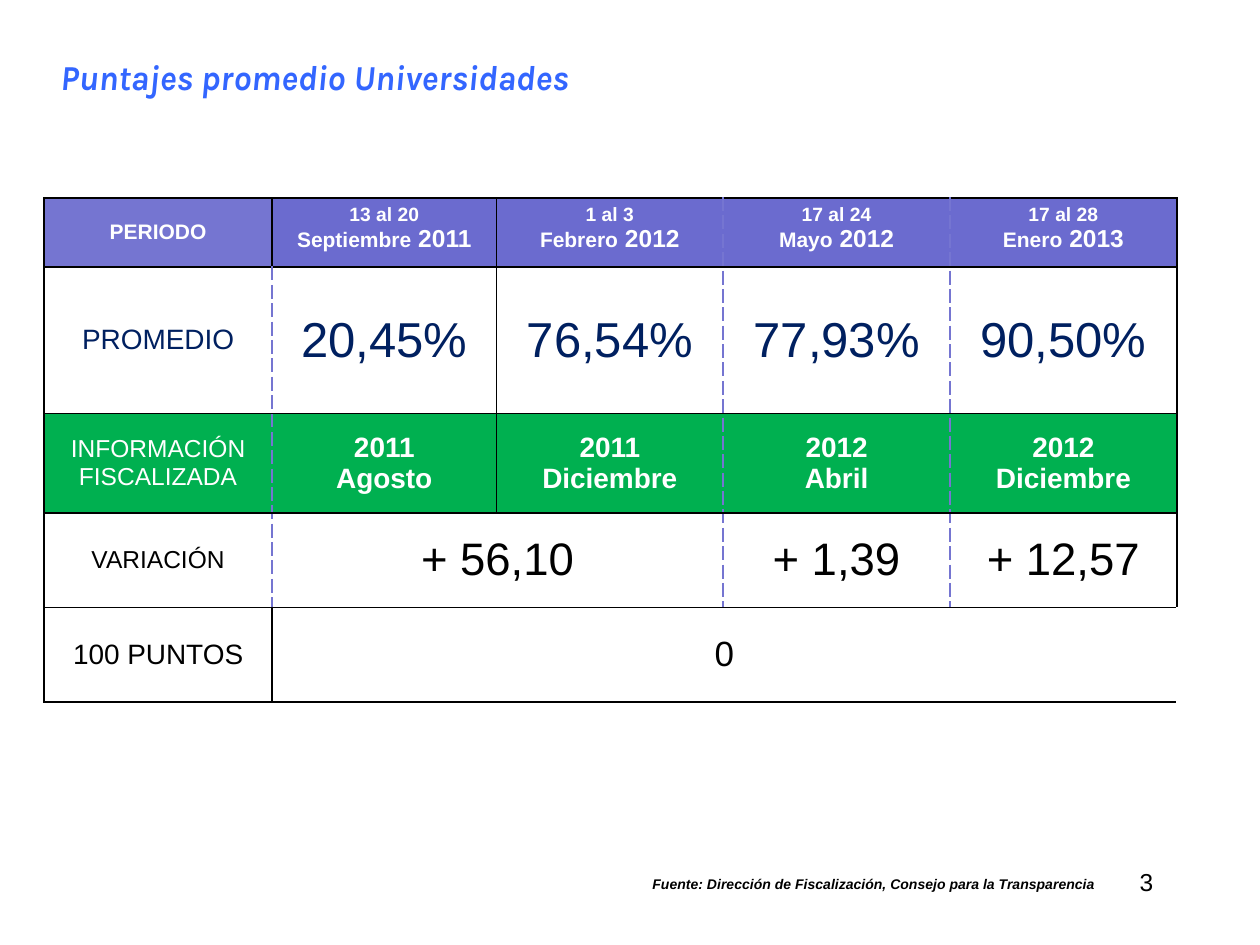
"""Builds the slide of average university scores by inspection period."""
from lxml.etree import SubElement
from pptx import Presentation
from pptx.dml.color import RGBColor
from pptx.enum.text import MSO_ANCHOR, PP_ALIGN
from pptx.oxml.ns import qn
from pptx.util import Inches, Pt

BLACK = RGBColor(0x00, 0x00, 0x00)
WHITE = RGBColor(0xFF, 0xFF, 0xFF)
BLUE = RGBColor(0x33, 0x66, 0xFF)
NAVY = RGBColor(0x00, 0x20, 0x60)
GREEN = RGBColor(0x00, 0xB0, 0x50)
LAVENDER = RGBColor(0x75, 0x75, 0xD1)
VIOLET = RGBColor(0x6B, 0x6B, 0xCF)

COLUMN_WIDTHS = [1.81, 1.78, 1.8, 1.8, 1.8]
ROW_HEIGHTS = [0.55, 1.16, 0.79, 0.75, 0.75]
PERIODS = [
    ("13 al 20", "Septiembre", "2011"),
    ("1 al 3", "Febrero", "2012"),
    ("17 al 24", "Mayo", "2012"),
    ("17 al 28", "Enero", "2013"),
]
AVERAGES = ["20,45%", "76,54%", "77,93%", "90,50%"]
INSPECTED = [("2011", "Agosto"), ("2011", "Diciembre"), ("2012", "Abril"), ("2012", "Diciembre")]
VARIATIONS = {1: "+ 56,10", 3: "+ 1,39", 4: "+ 12,57"}
ROW_LABELS = [
    ("PERIODO", 12, WHITE, True),
    ("PROMEDIO", 16, NAVY, False),
    ("INFORMACIÓN FISCALIZADA", 14, WHITE, False),
    ("VARIACIÓN", 14, BLACK, False),
    ("100 PUNTOS", 16, BLACK, False),
]
ROW_FILLS = [VIOLET, WHITE, GREEN, WHITE, WHITE]


def add_text(paragraph, text, size=14, color=BLACK, bold=False, italic=False,
             font="Arial", align=PP_ALIGN.CENTER):
    """Append a formatted run to a paragraph."""
    paragraph.alignment = align
    run = paragraph.add_run()
    run.text = text
    run.font.name = font
    run.font.size = Pt(size)
    run.font.bold = bold
    run.font.italic = italic
    run.font.color.rgb = color


def is_dashed(row, boundary):
    """Tell whether a vertical rule of the table is dashed."""
    return boundary in (3, 4) or (boundary == 1 and row in (1, 2, 3))


class SlideBuilder:
    """Holds the current slide and adds each kind of element to it."""

    def __init__(self, presentation):
        """Start a slide that has a title."""
        self.slide = presentation.slides.add_slide(presentation.slide_layouts[5])

    def add_title(self, text, left, top, width, height, **style):
        """Place and format the title."""
        title = self.slide.shapes.title
        title.left, title.top = Inches(left), Inches(top)
        title.width, title.height = Inches(width), Inches(height)
        frame = title.text_frame
        frame.vertical_anchor = MSO_ANCHOR.TOP
        frame.margin_left = Inches(0.17)
        add_text(frame.paragraphs[0], text, **style)

    def add_label(self, text, left, top, width, height, **style):
        """Add a text box with one line."""
        box = self.slide.shapes.add_textbox(Inches(left), Inches(top), Inches(width), Inches(height))
        box.text_frame.word_wrap = True
        add_text(box.text_frame.paragraphs[0], text, **style)

    def add_table(self, left, top, widths, heights):
        """Add an unstyled table and return it."""
        frame = self.slide.shapes.add_table(len(heights), len(widths), Inches(left), Inches(top),
                                            Inches(sum(widths)), Inches(sum(heights)))
        table = frame.table
        table.first_row = table.horz_banding = False
        for column, width in zip(table.columns, widths):
            column.width = Inches(width)
        for row, height in zip(table.rows, heights):
            row.height = Inches(height)
        return table

    def add_border(self, cell, side, dashed=False):
        """Draw one side of a cell."""
        properties = cell._tc.get_or_add_tcPr()
        line = SubElement(properties, qn(f"a:ln{side}"), w=str(Pt(1.5 if dashed else 1)))
        fill = SubElement(line, qn("a:solidFill"))
        SubElement(fill, qn("a:srgbClr"), val=str(LAVENDER if dashed else BLACK))
        SubElement(line, qn("a:prstDash"), val="sysDash" if dashed else "solid")

    def format_cell(self, table, row, column, color):
        """Set the borders, fill and anchor of a cell."""
        cell = table.cell(row, column)
        next_spanned = column < 4 and table.cell(row, column + 1).is_spanned
        if not cell.is_spanned:
            self.add_border(cell, "L", is_dashed(row, column))
        if not next_spanned:
            self.add_border(cell, "R", is_dashed(row, column + 1))
        self.add_border(cell, "T")
        self.add_border(cell, "B")
        cell.fill.solid()
        cell.fill.fore_color.rgb = color
        cell.vertical_anchor = MSO_ANCHOR.MIDDLE

    def write_cell(self, cell, *lines, **style):
        """Write each line, a list of text and size pairs, as a paragraph."""
        frame = cell.text_frame
        for index, line in enumerate(lines):
            paragraph = frame.add_paragraph() if index else frame.paragraphs[0]
            for text, size in line:
                add_text(paragraph, text, size=size, **style)


def add_scores(builder):
    """Add the table of scores."""
    table = builder.add_table(0.35, 1.57, COLUMN_WIDTHS, ROW_HEIGHTS)
    table.cell(3, 1).merge(table.cell(3, 2))
    table.cell(4, 1).merge(table.cell(4, 4))
    for row, color in enumerate(ROW_FILLS):
        for column in range(len(COLUMN_WIDTHS)):
            header_label = row == 0 and column == 0
            builder.format_cell(table, row, column, LAVENDER if header_label else color)
    for row, (label, size, color, bold) in enumerate(ROW_LABELS):
        builder.write_cell(table.cell(row, 0), [(label, size)], color=color, bold=bold)
    for column, (days, month, year) in enumerate(PERIODS, start=1):
        cell = table.cell(0, column)
        cell.vertical_anchor = MSO_ANCHOR.TOP
        builder.write_cell(cell, [(days, 11)], [(month, 12), (f" {year}", 14)], color=WHITE, bold=True)
    for column, average in enumerate(AVERAGES, start=1):
        builder.write_cell(table.cell(1, column), [(average, 28)], color=NAVY)
    for column, (year, month) in enumerate(INSPECTED, start=1):
        builder.write_cell(table.cell(2, column), [(year, 16)], [(month, 16)], color=WHITE, bold=True)
    for column, variation in VARIATIONS.items():
        builder.write_cell(table.cell(3, column), [(variation, 26)])
    builder.write_cell(table.cell(4, 1), [("0", 20)])


def main():
    """Build and save the presentation."""
    presentation = Presentation()
    presentation.slide_width, presentation.slide_height = Inches(10), Inches(7.5)
    builder = SlideBuilder(presentation)
    builder.add_title("Puntajes promedio Universidades", 0.31, 0.39, 8.11, 0.44, size=20,
                      color=BLUE, bold=True, italic=True, font="Karla", align=PP_ALIGN.LEFT)
    builder.add_label("3", 7.17, 6.83, 2.08, 0.5, align=PP_ALIGN.RIGHT)
    builder.add_label("Fuente: Dirección de Fiscalización, Consejo para la Transparencia",
                      5.08, 6.9, 5, 0.24, size=8, bold=True, italic=True, align=PP_ALIGN.LEFT)
    add_scores(builder)
    presentation.save("out.pptx")


if __name__ == "__main__":
    main()
